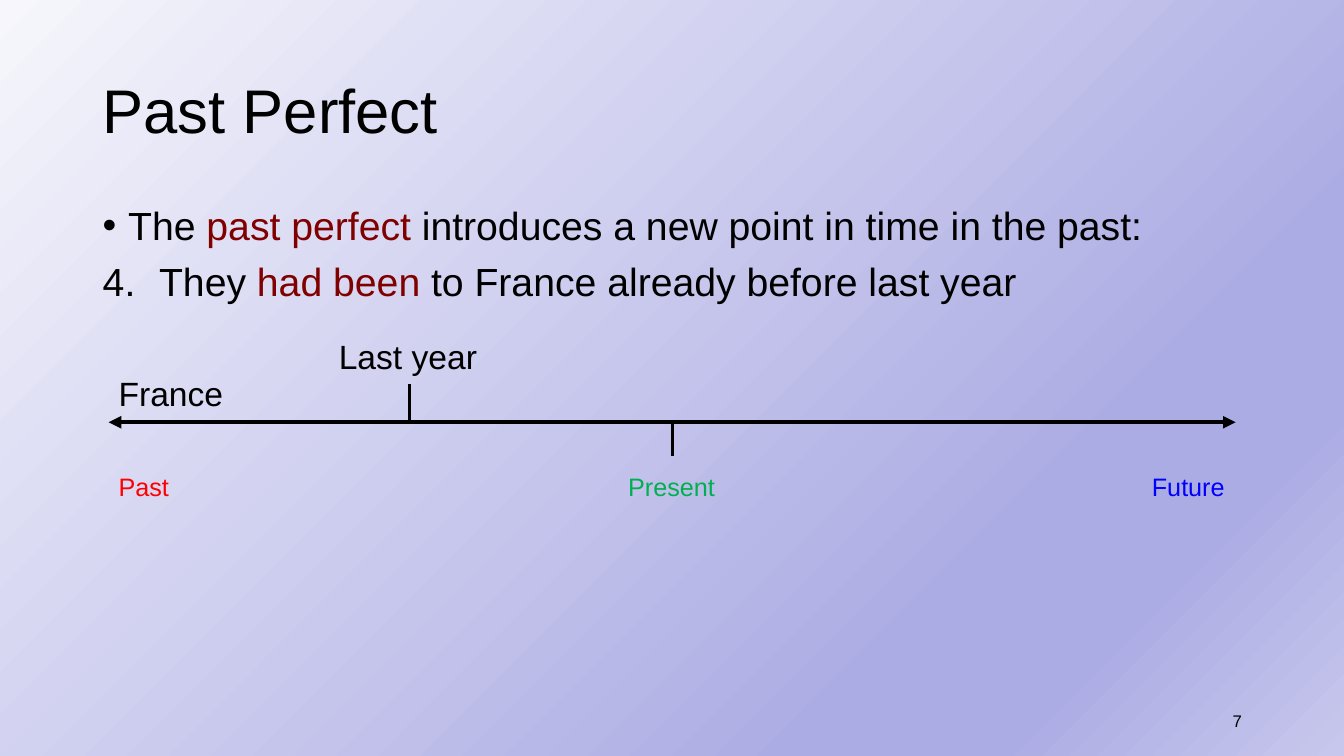
from collections import namedtuple
from dataclasses import dataclass

from lxml import etree
from pptx import Presentation
from pptx import util as u
from pptx.dml.color import RGBColor
from pptx.enum import shapes, text
from pptx.oxml import ns

Box = namedtuple("Box", "left top width height")


@dataclass(frozen=True)
class Theme:
    """Colours, font and type sizes of the slide."""
    font: str = "Arial"
    ink: str = "000000"
    accent: str = "800000"
    past: str = "FF0000"
    present: str = "00B050"
    future: str = "0000FF"
    background: tuple = ((0, "F6F6FC"), (74, "ACACE4"), (83, "ACACE4"), (100, "C7C7ED"))
    title: int = 44
    body: int = 28
    event: int = 24
    era: int = 18
    number: int = 12


THEME = Theme()


def add_element(parent, tag, **attributes):
    """Append a drawing element with its attributes and return it."""
    element = etree.SubElement(parent, ns.qn(tag))
    for name, value in attributes.items():
        element.set(name, str(value))
    return element


def paint_background(slide):
    """Fill the slide with the diagonal gradient."""
    slide.background.fill.gradient()
    gradient = slide.element.find(".//" + ns.qn("a:gradFill"))
    for child in list(gradient):
        gradient.remove(child)
    stops = add_element(gradient, "a:gsLst")
    for position, colour in THEME.background:
        stop = add_element(stops, "a:gs", pos=position * 1000)
        add_element(stop, "a:srgbClr", val=colour)
    add_element(gradient, "a:lin", ang=45 * 60000, scaled=0)


def add_run(paragraph, wording, size, colour=THEME.ink):
    """Add one formatted run to a paragraph."""
    run = paragraph.add_run()
    run.text = wording
    run.font.name = THEME.font
    run.font.size = u.Pt(size)
    run.font.color.rgb = RGBColor.from_string(colour)


def add_frame(slide, box, anchor=text.MSO_ANCHOR.TOP, wrap=True):
    """Add a text box in centimetres and return its text frame."""
    frame = slide.shapes.add_textbox(*map(u.Cm, box)).text_frame
    frame.word_wrap = wrap
    frame.vertical_anchor = anchor
    if not wrap:
        frame.auto_size = text.MSO_AUTO_SIZE.SHAPE_TO_FIT_TEXT
    return frame


def add_label(slide, box, wording, size, colour=THEME.ink):
    """Add a one-line label that fits its text."""
    add_run(add_frame(slide, box, wrap=False).paragraphs[0], wording, size, colour)


def add_line(slide, start, end, width, arrows=False):
    """Draw a straight line, with an arrowhead at both ends if asked."""
    points = map(u.Cm, (*start, *end))
    connector = slide.shapes.add_connector(shapes.MSO_CONNECTOR.STRAIGHT, *points)
    connector.line.width = u.Pt(width)
    connector.line.color.rgb = RGBColor.from_string(THEME.ink)
    if arrows:
        outline = connector.line.fill and connector.element.spPr.find(ns.qn("a:ln"))
        for tag in ("a:headEnd", "a:tailEnd"):
            add_element(outline, tag, type="triangle")
    add_element(connector.element.spPr, "a:effectLst")


def add_title(slide, box):
    """Place the slide title."""
    frame = add_frame(slide, box, text.MSO_ANCHOR.MIDDLE)
    frame.paragraphs[0].line_spacing = 0.9
    add_run(frame.paragraphs[0], "Past Perfect", THEME.title)


def add_body(slide, box):
    """Place the bulleted rule and the numbered example."""
    items = (
        (0.64, "a:buChar", {"char": "•"},
         ("The ", "past perfect", " introduces a new point in time in the past:")),
        (1.42, "a:buAutoNum", {"type": "arabicPeriod", "startAt": 4},
         ("They ", "had been", " to France already before last year")),
    )
    frame = add_frame(slide, box)
    for index, (indent, marker, attributes, wordings) in enumerate(items):
        paragraph = frame.add_paragraph() if index else frame.paragraphs[0]
        paragraph.line_spacing = 0.9
        paragraph.space_before = u.Pt(10)
        properties = paragraph._p.get_or_add_pPr()
        properties.set("marL", str(u.Cm(indent)))
        properties.set("indent", str(-u.Cm(indent)))
        add_element(properties, "a:buFont", typeface=THEME.font)
        add_element(properties, marker, **attributes)
        for wording, colour in zip(wordings, (THEME.ink, THEME.accent, THEME.ink)):
            add_run(paragraph, wording, THEME.body, colour)


def add_timeline(slide, box):
    """Draw the time axis with its eras below and events above."""
    axis = box.top + 2.31
    middle = box.left + box.width / 2
    add_line(slide, (box.left, axis), (box.left + box.width, axis), 3, arrows=True)
    add_line(slide, (middle, axis), (middle, axis + 0.84), 2)

    eras = (("Past", 1.8, THEME.past), ("Present", 2.72, THEME.present),
            ("Future", 2.36, THEME.future))
    for index, (wording, width, colour) in enumerate(eras):
        left = box.left + (box.width - width) * index / 2
        era_box = Box(left, box.top + box.height - 1.02, width, 1.02)
        add_label(slide, era_box, wording, THEME.era, colour)

    add_label(slide, Box(box.left, box.top + 0.94, 3.18, 1.27), "France", THEME.event)
    last_year = box.left + 7.57
    add_label(slide, Box(last_year - 2.02, box.top, 4.04, 1.27), "Last year", THEME.event)
    add_line(slide, (last_year, axis), (last_year, axis - 0.97), 2)


def add_page_number(slide, box):
    """Place the page number at the right of its box."""
    paragraph = add_frame(slide, box, text.MSO_ANCHOR.MIDDLE).paragraphs[0]
    paragraph.alignment = text.PP_ALIGN.RIGHT
    add_run(paragraph, "7", THEME.number)


def main():
    """Build the slide and save it."""
    presentation = Presentation()
    presentation.slide_width = u.Cm(33.87)
    presentation.slide_height = u.Cm(19.05)
    slide = presentation.slides.add_slide(presentation.slide_layouts[6])
    paint_background(slide)
    add_title(slide, Box(2.34, 1.02, 29.21, 3.68))
    add_body(slide, Box(2.34, 5.08, 29.21, 3.35))
    add_page_number(slide, Box(23.93, 17.65, 7.62, 1.02))
    add_timeline(slide, Box(2.74, 8.33, 28.4, 4.45))
    presentation.save("out.pptx")


if __name__ == "__main__":
    main()
